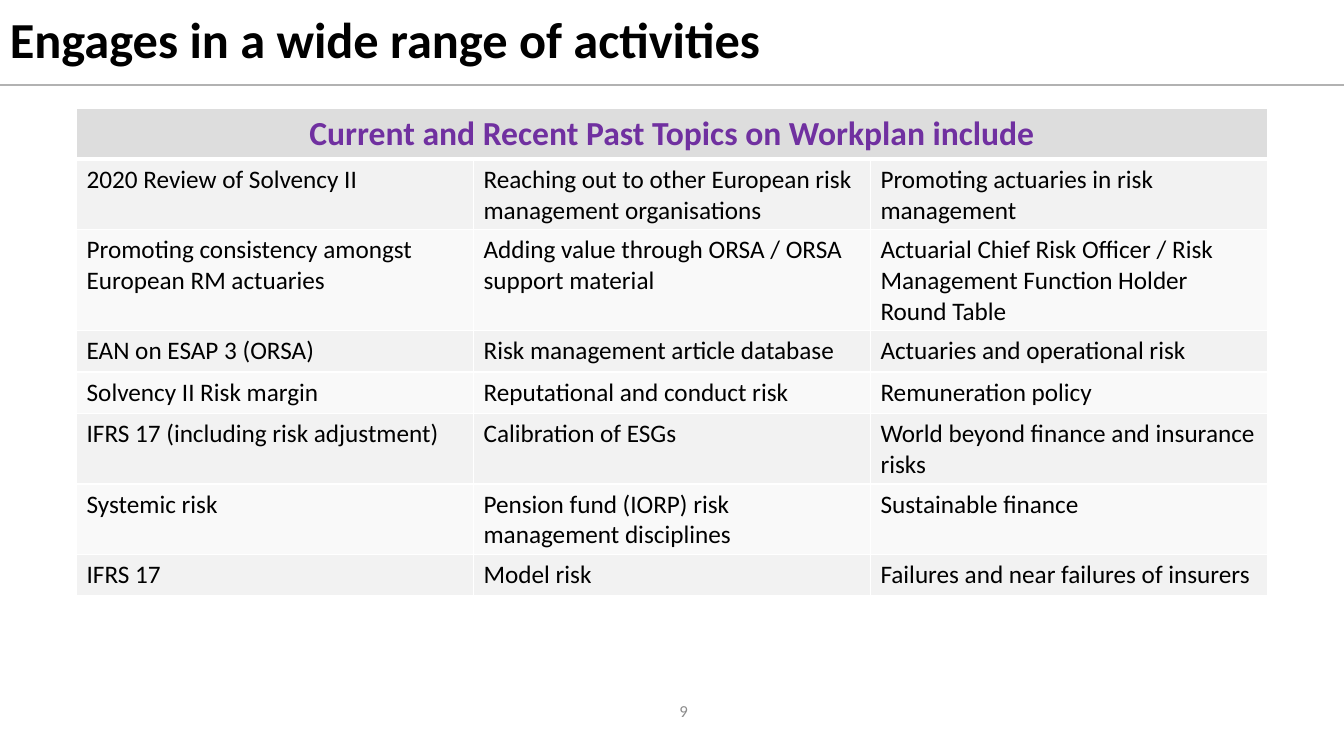
from lxml.etree import SubElement
from pptx import Presentation
from pptx.dml.color import RGBColor
from pptx.enum.text import MSO_ANCHOR, PP_ALIGN
from pptx.oxml import parse_xml
from pptx.oxml.ns import nsdecls, qn
from pptx.util import Inches, Pt

COLORS = {"black": "000000", "white": "FFFFFF", "purple": "7030A0",
          "rule": "B2B2B2", "number": "8C8C8C", "head": "DDDDDD",
          "odd": "F2F2F2", "even": "F9F9F9"}
FONT = "Calibri"
WIDTH, HEIGHT = 13.33, 7.5
HEADING = "Current and Recent Past Topics on Workplan include"
TOPICS = [
    ("2020 Review of Solvency II",
     "Reaching out to other European risk management organisations",
     "Promoting actuaries in risk management"),
    ("Promoting consistency amongst European RM actuaries",
     "Adding value through ORSA / ORSA support material",
     "Actuarial Chief Risk Officer / Risk Management Function Holder Round Table"),
    ("EAN on ESAP 3 (ORSA)", "Risk management article database",
     "Actuaries and operational risk"),
    ("Solvency II Risk margin", "Reputational and conduct risk",
     "Remuneration policy"),
    ("IFRS 17 (including risk adjustment)", "Calibration of ESGs",
     "World beyond finance and insurance risks"),
    ("Systemic risk", "Pension fund (IORP) risk management disciplines",
     "Sustainable finance"),
    ("IFRS 17", "Model risk", "Failures and near failures of insurers"),
]


def color(name):
    return RGBColor.from_string(COLORS[name])


def style(para, size, tint, bold=False, align=PP_ALIGN.LEFT):
    para.alignment = align
    font = para.font
    font.name, font.size, font.bold = FONT, Pt(size), bold
    font.color.rgb = color(tint)


def add_text(slide, box, text, *look, **more):
    frame = slide.shapes.add_textbox(*map(Inches, box)).text_frame
    frame.word_wrap = True
    frame.vertical_anchor = MSO_ANCHOR.MIDDLE
    frame.text = text
    para = frame.paragraphs[0]
    style(para, *look, **more)
    return para


def add_title(slide, box, text):
    """Place the title in its box and a rule just below it."""
    left, top, width, height = box
    add_text(slide, box, text, 36, "black", bold=True).line_spacing = 0.9
    level = Inches(top + height + 0.01)
    rule = slide.shapes.add_connector(1, Inches(left), level,
                                      Inches(left + width), level)
    rule.line.color.rgb = color("rule")
    rule.line.width = Pt(1.5)
    SubElement(rule._element.spPr, qn("a:effectLst"))


def set_edges(cell, top, bottom):
    """Draw white cell borders; top and bottom are widths in points."""
    widths = {"lnL": 1, "lnR": 1, "lnT": top, "lnB": bottom}
    props = cell._tc.get_or_add_tcPr()
    for place, (tag, width) in enumerate(widths.items()):
        props.insert(place, parse_xml(
            f'<a:{tag} {nsdecls("a")} w="{Pt(width)}"><a:solidFill>'
            f'<a:srgbClr val="{COLORS["white"]}"/></a:solidFill></a:{tag}>'))


def fill_cell(cell, text, tint, edges, *look, **more):
    cell.text = text
    cell.fill.solid()
    cell.fill.fore_color.rgb = color(tint)
    set_edges(cell, *edges)
    style(cell.text_frame.paragraphs[0], *look, **more)


def add_topics(slide, box, heading, topics):
    rows, cols = len(topics) + 1, len(topics[0])
    table = slide.shapes.add_table(rows, cols, *map(Inches, box)).table
    table.cell(0, 0).merge(table.cell(0, cols - 1))
    for col in range(cols):
        fill_cell(table.cell(0, col), "" if col else heading, "head", (1, 3),
                  24, "purple", bold=True, align=PP_ALIGN.CENTER)
    for row, topic in enumerate(topics, 1):
        tint = "odd" if row % 2 else "even"
        edges = (3 if row == 1 else 1, 1)
        for col, text in enumerate(topic):
            fill_cell(table.cell(row, col), text, tint, edges, 18, "black")


def main():
    deck = Presentation()
    deck.slide_width, deck.slide_height = Inches(WIDTH), Inches(HEIGHT)
    slide = deck.slides.add_slide(deck.slide_layouts[6])
    add_title(slide, (0, 0, WIDTH, 0.83), "Engages in a wide range of activities")
    add_text(slide, (6.4, 6.85, 0.52, 0.4), "9", 12, "number",
             align=PP_ALIGN.RIGHT)
    table_width = 11.81
    left = (WIDTH - table_width) / 2
    add_topics(slide, (left, 1.08, table_width, 0.41 * (len(TOPICS) + 1)),
               HEADING, TOPICS)
    deck.save("out.pptx")


if __name__ == "__main__":
    main()
